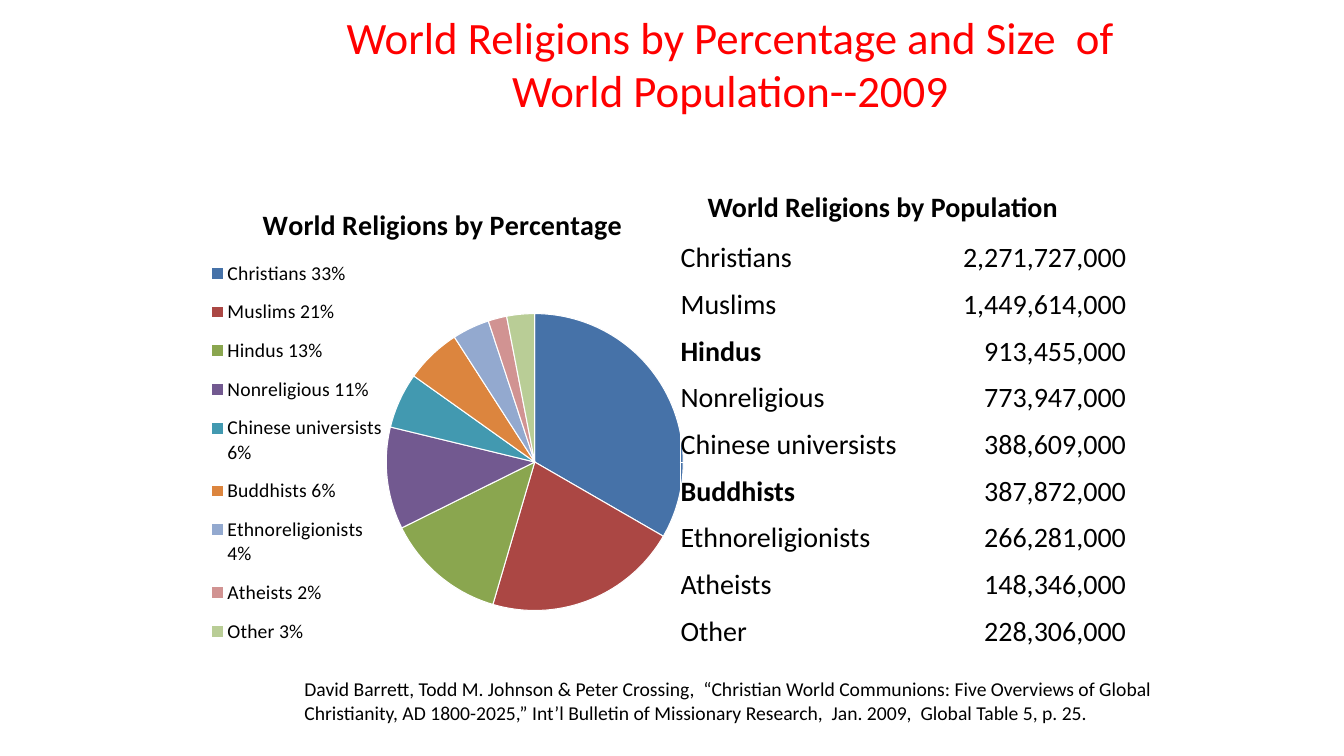
from lxml import etree
from pptx import Presentation
from pptx.chart.data import CategoryChartData as Data
from pptx.dml.color import RGBColor as Rgb
from pptx.enum.chart import XL_CHART_TYPE as Kind, XL_LEGEND_POSITION as Side
from pptx.enum.text import MSO_ANCHOR as Anchor, MSO_AUTO_SIZE as Fit, PP_ALIGN as Align
from pptx.oxml.ns import qn
from pptx.util import Inches, Pt

COLORS = {
    "title": "FF0000", "text": "000000", "edge": "FFFFFF",
    "Christians": "4672A8", "Muslims": "AB4744", "Hindus": "8AA64F",
    "Nonreligious": "725990", "Chinese universists": "4299B0",
    "Buddhists": "DC853E", "Ethnoreligionists": "93A9CF",
    "Atheists": "D19392", "Other": "B9CD96",
}
FAITHS = [
    ("Christians", 33, "2,271,727,000"),
    ("Muslims", 21, "1,449,614,000"),
    ("Hindus", 13, "913,455,000"),
    ("Nonreligious", 11, "773,947,000"),
    ("Chinese universists", 6, "388,609,000"),
    ("Buddhists", 6, "387,872,000"),
    ("Ethnoreligionists", 4, "266,281,000"),
    ("Atheists", 2, "148,346,000"),
    ("Other", 3, "228,306,000"),
]
BOLD = {"Hindus", "Buddhists"}


class Deck:
    face = "Calibri"

    def __init__(self):
        self.prs = Presentation()
        self.prs.slide_width = Inches(13.33)
        self.prs.slide_height = Inches(7.5)
        self.slide = self.prs.slides.add_slide(self.prs.slide_layouts[5])

    def style(self, font, size, color="text", bold=False):
        font.name = self.face
        font.size = Pt(size)
        font.bold = bold
        font.color.rgb = Rgb.from_string(COLORS[color])

    def put(self, frame, text, size, color="text", bold=False, align=Align.LEFT):
        para = frame.paragraphs[0]
        para.alignment = align
        run = para.add_run()
        run.text = text
        self.style(run.font, size, color, bold)

    def title(self, text, box):
        shape = self.slide.shapes.title
        shape.left, shape.top, shape.width, shape.height = map(Inches, box)
        frame = shape.text_frame
        frame.word_wrap = True
        frame.auto_size = Fit.NONE
        frame.vertical_anchor = Anchor.MIDDLE
        self.put(frame, text, 32, "title", align=Align.CENTER)

    def text(self, text, box, size, bold=False):
        frame = self.slide.shapes.add_textbox(*map(Inches, box)).text_frame
        frame.word_wrap = True
        frame.auto_size = Fit.SHAPE_TO_FIT_TEXT
        self.put(frame, text, size, bold=bold)

    def layout(self, box, inner=False):
        node = etree.Element(qn("c:layout"))
        manual = etree.SubElement(node, qn("c:manualLayout"))
        pairs = [("layoutTarget", "inner")] if inner else []
        pairs += [("xMode", "edge"), ("yMode", "edge"), *zip("xywh", box)]
        for tag, val in pairs:
            etree.SubElement(manual, qn(f"c:{tag}")).set("val", str(val))
        return node

    def pie(self, name, rows, box, plot, key):
        data = Data()
        data.categories = [f"{faith} {share}%" for faith, share, _ in rows]
        data.add_series(name, [share for _, share, _ in rows])
        chart = self.slide.shapes.add_chart(Kind.PIE, *map(Inches, box), data).chart
        self.style(chart.font, 10)
        chart.has_title = True
        self.put(chart.chart_title.text_frame, name, 20, bold=True, align=Align.CENTER)
        chart.has_legend = True
        chart.legend.position = Side.LEFT
        chart.legend.include_in_layout = False
        self.style(chart.legend.font, 14)
        chart.plots[0].vary_by_categories = True
        for i, (faith, *_) in enumerate(rows):
            look = chart.plots[0].series[0].points[i].format
            look.fill.solid()
            look.fill.fore_color.rgb = Rgb.from_string(COLORS[faith])
            look.line.color.rgb = Rgb.from_string(COLORS["edge"])
            look.line.width = Pt(0.75)
        root = chart._chartSpace
        area = root.find(".//" + qn("c:plotArea"))
        legend = root.find(".//" + qn("c:legend"))
        for part in (area, legend):
            for old in part.findall(qn("c:layout")):
                part.remove(old)
        area.insert(0, self.layout(plot, True))
        legend.find(qn("c:legendPos")).addnext(self.layout(key))

    def table(self, rows, box, widths):
        grid = self.slide.shapes.add_table(len(rows), len(widths), *map(Inches, box)).table
        grid.first_row = grid.horz_banding = False
        for col, width in zip(grid.columns, widths):
            col.width = Inches(width)
        for r, (faith, _, count) in enumerate(rows):
            fields = [(faith, faith in BOLD, Align.LEFT), (count, False, Align.RIGHT)]
            for c, (text, bold, align) in enumerate(fields):
                cell = grid.cell(r, c)
                cell.fill.background()
                cell.vertical_anchor = Anchor.BOTTOM
                cell.margin_left = cell.margin_right = 0
                cell.margin_top = cell.margin_bottom = 0
                self.put(cell.text_frame, text, 20, bold=bold, align=align)


def main():
    deck = Deck()
    deck.title("World Religions by Percentage and Size  of World Population--2009",
               (2.83, 0, 8.83, 1.25))
    deck.text("David Barrett, Todd M. Johnson & Peter Crossing,  “Christian World "
              "Communions: Five Overviews of Global Christianity, AD 1800-2025,” Int’l "
              "Bulletin of Missionary Research,  Jan. 2009,  Global Table 5, p. 25.",
              (2.92, 6.67, 8.75, 0.57), 14)
    deck.pie("World Religions by Percentage", FAITHS, (1.85, 1.83, 5.08, 4.75),
             (0.39, 0.21, 0.58, 0.74), (0.04, 0.13, 0.35, 0.86))
    deck.table(FAITHS, (6.75, 2.27, 4.42, 4.17), (2.54, 1.88))
    deck.text("World Religions by Population", (6.92, 1.83, 3.83, 0.44), 20, True)
    deck.prs.save("out.pptx")


if __name__ == "__main__":
    main()
